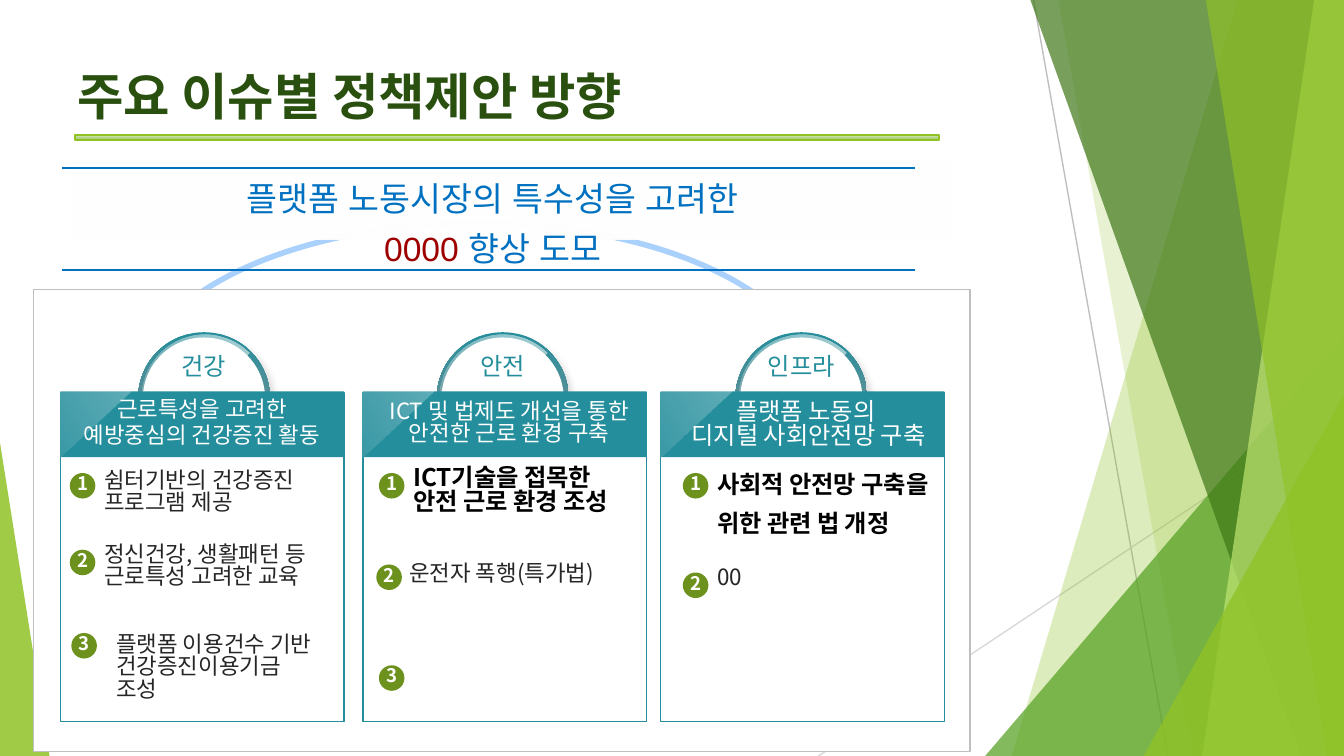
from lxml import etree
from pptx import Presentation
from pptx.dml.color import RGBColor
from pptx.enum.shapes import MSO_CONNECTOR, MSO_SHAPE
from pptx.enum.text import MSO_ANCHOR, PP_ALIGN
from pptx.oxml.ns import qn
from pptx.util import Pt

ARC, PIE, ELLIPSE = MSO_SHAPE.ARC, MSO_SHAPE.PIE, MSO_SHAPE.OVAL
RECTANGLE, ROUNDED = MSO_SHAPE.RECTANGLE, MSO_SHAPE.ROUNDED_RECTANGLE
TRIANGLE, STRAIGHT = MSO_SHAPE.ISOSCELES_TRIANGLE, MSO_CONNECTOR.STRAIGHT
LEFT, CENTER = PP_ALIGN.LEFT, PP_ALIGN.CENTER
TOP, MIDDLE = MSO_ANCHOR.TOP, MSO_ANCHOR.MIDDLE
KOREAN, LATIN = "Noto Sans CJK KR", "Arial"
TIGHT = 0.82

COLORS = {
    "white": "FFFFFF", "black": "000000", "ink": "262626", "teal": "248E9C",
    "gray": "929292", "silver": "BFBFBF", "pale": "D8D8D8", "title": "2A5010",
    "lime": "90C226", "green": "54A021", "forest": "3F7818", "spring": "BFE471",
    "mist": "D2E4BB", "leaf": "9FC95F", "olive": "6C911C", "sky": "AAD1FC",
    "blue": "0070C0", "red": "9E0000",
}
FORMATS = {
    "title": {"size": Pt(27), "bold": True, "name": KOREAN},
    "large": {"size": Pt(13), "bold": False, "name": KOREAN},
    "strong": {"size": Pt(13), "bold": True, "name": KOREAN},
    "body": {"size": Pt(12), "bold": False, "name": KOREAN},
    "number": {"size": Pt(10), "bold": True, "name": KOREAN},
    "slogan": {"size": Pt(18), "bold": False, "name": LATIN},
}
FRAME = {
    "word_wrap": True, "margin_left": Pt(5.4), "margin_right": Pt(5.4),
    "margin_top": Pt(2.7), "margin_bottom": Pt(2.7),
}


class SlideWriter:
    def __init__(self, deck):
        self.page = deck.slides.add_slide(deck.slide_layouts[6])
        self.shapes = self.page.shapes

    def color(self, name):
        return RGBColor.from_string(COLORS[name])

    def gradient(self, shape, stops, angle):
        shape.fill.gradient()
        shape.fill.gradient_angle = (360 - angle) % 360
        stop_list = shape.element.spPr.find(".//" + qn("a:gsLst"))
        for stop in list(stop_list):
            stop_list.remove(stop)
        for position, name, alpha in stops:
            stop = etree.SubElement(stop_list, qn("a:gs"), pos=str(position * 1000))
            tone = etree.SubElement(stop, qn("a:srgbClr"), val=COLORS[name])
            etree.SubElement(tone, qn("a:alpha"), val=str(alpha * 1000))

    def paint(self, shape, fill=None, alpha=100, line=None, width=0.75, stops=None, angle=0):
        shape.shadow.inherit = False
        if stops:
            self.gradient(shape, stops, angle)
        elif fill:
            shape.fill.solid()
            shape.fill.fore_color.rgb = self.color(fill)
            if alpha < 100:
                tone = shape.element.spPr.find(".//" + qn("a:srgbClr"))
                etree.SubElement(tone, qn("a:alpha"), val=str(alpha * 1000))
        else:
            shape.fill.background()
        if line:
            shape.line.color.rgb = self.color(line)
            shape.line.width = Pt(width)
        else:
            shape.line.fill.background()
        return shape

    def shape(self, kind, area, adjust=(), **style):
        shape = self.shapes.add_shape(kind, *map(Pt, area))
        for index, value in enumerate(adjust):
            shape.adjustments[index] = value
        return self.paint(shape, **style)

    def outline(self, points, **style):
        builder = self.shapes.build_freeform(*points[0], scale=Pt(1))
        builder.add_line_segments(points[1:], close=True)
        return self.paint(builder.convert_to_shape(), **style)

    def shadow(self, shape, alpha, blur, distance, angle):
        effects = shape.element.spPr.find(qn("a:effectLst"))
        outer = etree.SubElement(
            effects, qn("a:outerShdw"), blurRad=str(Pt(blur)), dist=str(Pt(distance)),
            dir=str(angle * 60000), algn="ctr", rotWithShape="0")
        tone = etree.SubElement(outer, qn("a:srgbClr"), val=COLORS["black"])
        etree.SubElement(tone, qn("a:alpha"), val=str(alpha * 1000))

    def line(self, start, end, color):
        line = self.shapes.add_connector(STRAIGHT, *map(Pt, start + end))
        line.line.color.rgb = self.color(color)
        line.line.width = Pt(0.75)
        etree.SubElement(line.element.spPr, qn("a:effectLst"))

    def text(self, area, paragraphs, style, color, align=LEFT, anchor=TOP, spacing=TIGHT, gap=0):
        box = self.shapes.add_textbox(*map(Pt, area))
        frame = box.text_frame
        for key, value in {**FRAME, "vertical_anchor": anchor}.items():
            setattr(frame, key, value)
        for index, content in enumerate(paragraphs):
            para = frame.add_paragraph() if index else frame.paragraphs[0]
            layout = {"alignment": align, "line_spacing": spacing,
                      "space_before": Pt(gap if index else 0)}
            for key, value in layout.items():
                setattr(para, key, value)
            pieces = [(content, color)] if isinstance(content, str) else content
            for words, tone in pieces:
                span = para.add_run()
                span.text = words
                for key, value in FORMATS[style].items():
                    setattr(span.font, key, value)
                span.font.color.rgb = self.color(tone)
                etree.SubElement(span.font._element, qn("a:ea"), typeface=FORMATS[style]["name"])

    def column(self, card, dome, label, heading, style, heading_area, gap=0):
        back = self.shape(ELLIPSE, (dome, 178, 70.6, 70.6), angle=90,
                          stops=[(0, "teal", 100), (1, "teal", 100), (100, "gray", 100)])
        self.shadow(back, 14, 4, 3, 50)
        gloss = self.shape(PIE, (dome + 1.6, 179.5, 67.7, 67.7), (53.53, 162), angle=270,
                           stops=[(0, "white", 0), (10, "white", 0),
                                  (73, "white", 54), (100, "white", 54)])
        gloss.rotation = 45
        front = self.shape(ELLIPSE, (dome + 2.5, 180.8, 65.5, 65.5), fill="white")
        self.shadow(front, 27, 0, 2, 90)
        self.text((dome - 3.7, 187.5, 77.8, 20.2), [label], "large", "teal", CENTER, spacing=0.87)
        self.shape(ROUNDED, (card, 210.2, 152, 176.4), (0,), fill="white", line="teal")
        self.shape(ROUNDED, (card, 209.7, 152, 35.2), (0,), fill="teal")
        self.outline([(card, 244.9), (card + 38, 209.7), (card, 209.7)], angle=150,
                     stops=[(0, "white", 27), (100, "white", 10)])
        self.text(heading_area, heading, style, "white", CENTER, MIDDLE, gap=gap)

    def bullet(self, left, top, number):
        self.shape(ELLIPSE, (left, top, 13.7, 13.7), fill="olive")
        self.text((left - 5, top - 1.4, 23.8, 15.8), [number], "number", "white", CENTER, MIDDLE)


def main():
    deck = Presentation()
    deck.slide_width, deck.slide_height = Pt(720), Pt(405)
    writer = SlideWriter(deck)

    writer.line((553.7, 0), (625.7, 405), "silver")
    writer.line((720, 217.4), (438.5, 405), "pale")
    for top_left, bottom_left, color, alpha in [(663, 542, "lime", 30), (567.4, 638.6, "lime", 20)]:
        writer.outline([(top_left, 0), (720, 0), (720, 405), (bottom_left, 405)],
                       fill=color, alpha=alpha)
    writer.shape(TRIANGLE, (527.8, 180, 192.2, 225), (1,), fill="green", alpha=72)
    for top_left, bottom_left, color, alpha in [
            (551.5, 697, "forest", 70), (704.2, 643.7, "spring", 70), (645.8, 711.4, "lime", 65)]:
        writer.outline([(top_left, 0), (720, 0), (720, 405), (bottom_left, 405)],
                       fill=color, alpha=alpha)
    writer.shape(TRIANGLE, (612.7, 211.7, 107.3, 193.3), (1,), fill="lime", alpha=80)
    writer.shape(TRIANGLE, (0, 237, 26.6, 168), (0,), fill="lime", alpha=85)

    writer.text((36, 33.8, 543.6, 40.3), ["주요 이슈별 정책제안 방향"], "title", "title", anchor=MIDDLE)
    writer.shape(RECTANGLE, (40.3, 72.5, 463, 2.6), line="lime", width=1, angle=90,
                 stops=[(0, "mist", 100), (88, "leaf", 100), (100, "leaf", 100)])
    writer.shape(ARC, (72, 119.5, 367.2, 182.2), (108.82, 0), line="sky", width=3)
    writer.shape(RECTANGLE, (18, 155, 501.8, 247.7), fill="white", line="silver")

    writer.column(353.9, 394, "인프라", ["플랫폼 노동의 ", "디지털 사회안전망 구축"],
                  "large", (357.1, 217.4, 152, 20.9))
    writer.column(194.4, 234, "안전", ["ICT 및 법제도 개선을 통한 안전한 근로 환경 구축"],
                  "body", (192.2, 216.7, 161.3, 20.9))
    writer.column(32.4, 74, "건강", ["근로특성을 고려한", "예방중심의 건강증진 활동"],
                  "body", (23, 216.7, 170.6, 20.9), gap=2)

    writer.text((378.7, 247.7, 143.3, 43.9), ["사회적 안전망 구축을", "위한 관련 법 개정"],
                "strong", "black", spacing=1.05, gap=5)
    writer.text((216, 247.7, 130.3, 38.2), ["ICT기술을 접목한", "안전 근로 환경 조성"],
                "strong", "black")
    for area, paragraphs in [
            ((50.4, 249.8, 130.3, 36), ["쉼터기반의 건강증진 프로그램 제공"]),
            ((50.4, 289.4, 122.4, 36), ["정신건강, 생활패턴 등 근로특성 고려한 교육"]),
            ((56.9, 337.7, 122.4, 36), ["플랫폼 이용건수 기반", "건강증진이용기금 조성"]),
            ((213.8, 299.5, 133.2, 20.9), ["운전자 폭행(특가법)"]),
            ((378.7, 301.7, 133.2, 20.9), ["00"])]:
        writer.text(area, paragraphs, "body", "ink")
    for left, top, number in [
            (37.4, 253.4, "1"), (37.4, 294.5, "2"), (38.2, 339.1, "3"),
            (203, 253.4, "1"), (201.6, 302.4, "2"), (203, 356.4, "3"),
            (365.8, 253.4, "1"), (365.8, 306.7, "2")]:
        writer.bullet(left, top, number)

    writer.shape(RECTANGLE, (33.8, 85, 476, 43.2),
                 stops=[(0, "white", 0), (1, "white", 0), (25, "white", 100),
                        (70, "white", 100), (100, "white", 0)])
    for height in (90, 144.7):
        writer.line((490.3, height), (33.1, height), "blue")
    writer.text((-8.6, 92.9, 550, 53.3),
                ["플랫폼 노동시장의 특수성을 고려한 ", [("0000 ", "red"), ("향상 도모 ", "blue")]],
                "slogan", "blue", CENTER, spacing=1, gap=5)
    deck.save("out.pptx")


if __name__ == "__main__":
    main()
